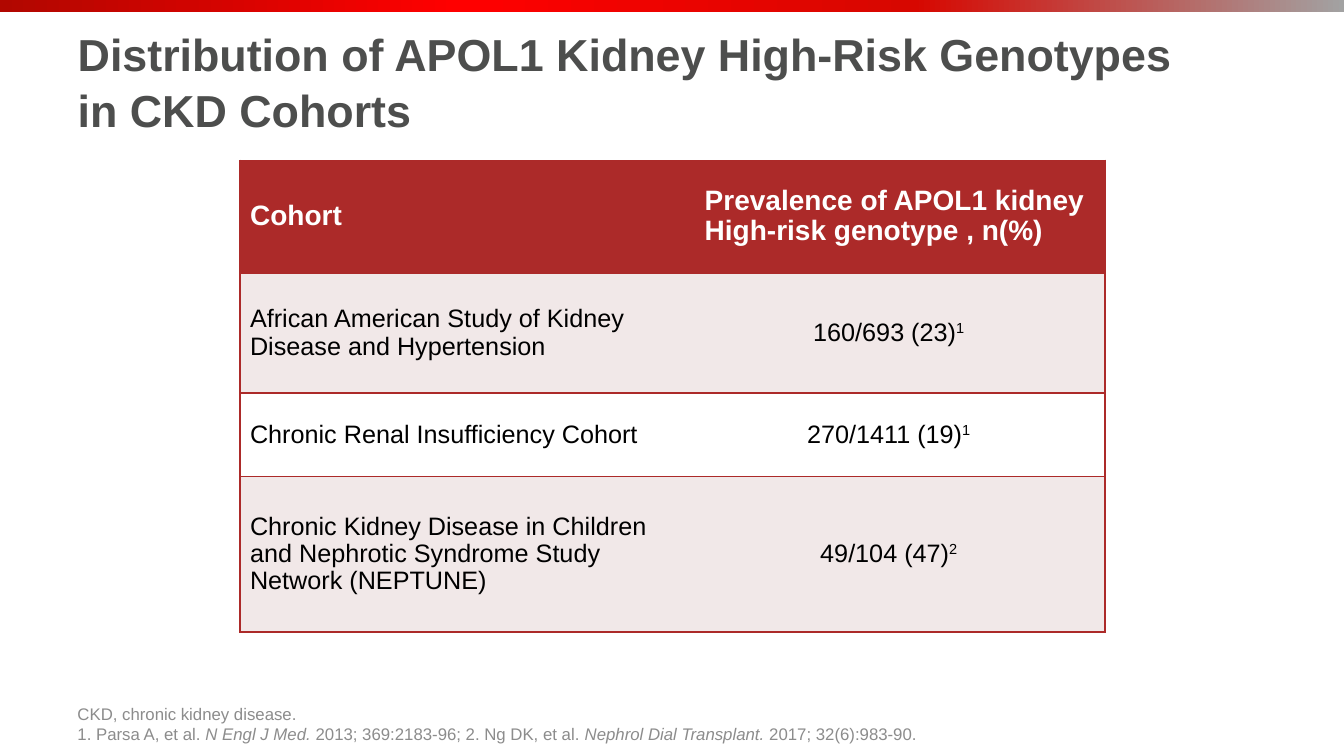
import pptx
import pptx.util
import pptx.dml.color
import pptx.enum.shapes
import pptx.enum.text
import pptx.oxml
import pptx.oxml.ns
import lxml.etree

Inches = pptx.util.Inches
qn = pptx.oxml.ns.qn
RED = "AC2A29"
MIDDLE = pptx.enum.text.MSO_ANCHOR.MIDDLE


def color(hex_value):
    return pptx.dml.color.RGBColor.from_string(hex_value)


def add_run(paragraph, text, size, hex_value, bold=False, italic=False):
    run = paragraph.add_run()
    run.text = text
    run.font.name = "Arial"
    run.font.size = pptx.util.Pt(size)
    run.font.color.rgb = color(hex_value)
    run.font.bold = bold
    run.font.italic = italic
    return run


presentation = pptx.Presentation()
presentation.slide_width = Inches(13.33)
presentation.slide_height = Inches(7.5)
slide = presentation.slides.add_slide(presentation.slide_layouts[5])

top_bar = slide.shapes.add_shape(
    pptx.enum.shapes.MSO_SHAPE.RECTANGLE, 0, 0, Inches(13.33), Inches(0.12))
top_bar.shadow.inherit = False
top_bar.line.fill.background()
top_bar.fill.gradient()
top_bar.fill.gradient_angle = 0
stop_list = top_bar._element.spPr.find(qn("a:gradFill")).find(qn("a:gsLst"))
for stop in list(stop_list):
    stop_list.remove(stop)
for percent, hex_value in [(0, "B10700"), (14, "D00400"), (34, "FF0000"),
                           (68, "D70700"), (100, "A2A2A2")]:
    stop = lxml.etree.SubElement(stop_list, qn("a:gs"), pos=str(percent * 1000))
    lxml.etree.SubElement(stop, qn("a:srgbClr"), val=hex_value)

title = slide.shapes.title
title.left, title.top = Inches(0.67), Inches(0.07)
title.width, title.height = Inches(11.75), Inches(1.45)
title.text_frame.vertical_anchor = MIDDLE
title.text_frame.auto_size = pptx.enum.text.MSO_AUTO_SIZE.NONE
paragraph = title.text_frame.paragraphs[0]
paragraph.alignment = pptx.enum.text.PP_ALIGN.LEFT
paragraph.line_spacing = 1.05
add_run(paragraph, "Distribution of APOL1 Kidney High-Risk Genotypes", 32, "4D4E4D", bold=True)
paragraph.add_line_break()
add_run(paragraph, "in CKD Cohorts", 32, "4D4E4D", bold=True)

cohorts = [
    ("African American Study of Kidney Disease and Hypertension", "160/693 (23)", "1"),
    ("Chronic Renal Insufficiency Cohort", "270/1411 (19)", "1"),
    ("Chronic Kidney Disease in Children and Nephrotic Syndrome Study Network (NEPTUNE)",
     "49/104 (47)", "2"),
]
table = slide.shapes.add_table(
    4, 2, Inches(2.38), Inches(1.59), Inches(8.58), Inches(4.68)).table
table._tbl.tblPr.find(qn("a:tableStyleId")).text = "{2D5ABB26-0587-4C30-8999-92F81FD0307C}"
table.horz_banding = False
for row, height in zip(table.rows, [1.12, 1.19, 0.83, 1.54]):
    row.height = Inches(height)

add_run(table.cell(0, 0).text_frame.paragraphs[0], "Cohort", 20, "FFFFFF", bold=True)
prevalence_header = table.cell(0, 1)
prevalence_header.margin_left = Inches(0.32)
add_run(prevalence_header.text_frame.paragraphs[0],
        "Prevalence of APOL1 kidney", 20, "FFFFFF", bold=True)
add_run(prevalence_header.text_frame.add_paragraph(),
        "High-risk genotype , n(%)", 20, "FFFFFF", bold=True)

for row_index, (cohort, prevalence, reference) in enumerate(cohorts, start=1):
    add_run(table.cell(row_index, 0).text_frame.paragraphs[0], cohort, 18, "000000")
    paragraph = table.cell(row_index, 1).text_frame.paragraphs[0]
    paragraph.alignment = pptx.enum.text.PP_ALIGN.CENTER
    add_run(paragraph, prevalence, 18, "000000")
    superscript = add_run(paragraph, reference, 18, "000000")
    superscript.font._element.set("baseline", "30000")

row_fills = [RED, "F1E8E8", "FFFFFF", "F1E8E8"]
for row_index, row_fill in enumerate(row_fills):
    for column_index, outer_side in enumerate(["a:lnL", "a:lnR"]):
        cell = table.cell(row_index, column_index)
        cell.vertical_anchor = MIDDLE
        cell.fill.solid()
        cell.fill.fore_color.rgb = color(row_fill)
        for paragraph in cell.text_frame.paragraphs:
            paragraph.line_spacing = 0.97
        properties = cell._tc.get_or_add_tcPr()
        for position, side in enumerate([outer_side, "a:lnT", "a:lnB"]):
            border = pptx.oxml.parse_xml(
                f'<{side} {pptx.oxml.ns.nsdecls("a")} w="12700"><a:solidFill>'
                f'<a:srgbClr val="{RED}"/></a:solidFill></{side}>')
            properties.insert(position, border)

footnote = slide.shapes.add_textbox(Inches(0.67), Inches(6.95), Inches(9.86), Inches(0.48))
footnote.text_frame.word_wrap = True
footnote.text_frame.vertical_anchor = pptx.enum.text.MSO_ANCHOR.BOTTOM
add_run(footnote.text_frame.paragraphs[0], "CKD, chronic kidney disease.", 12, "8C8C8C")
references = footnote.text_frame.add_paragraph()
for text, italic in [
    ("1. Parsa A, et al. ", False),
    ("N Engl J Med.", True),
    (" 2013; 369:2183-96; 2. Ng DK, et al. ", False),
    ("Nephrol Dial Transplant.", True),
    (" 2017; 32(6):983-90.", False),
]:
    add_run(references, text, 12, "8C8C8C", italic=italic)

presentation.save("out.pptx")
